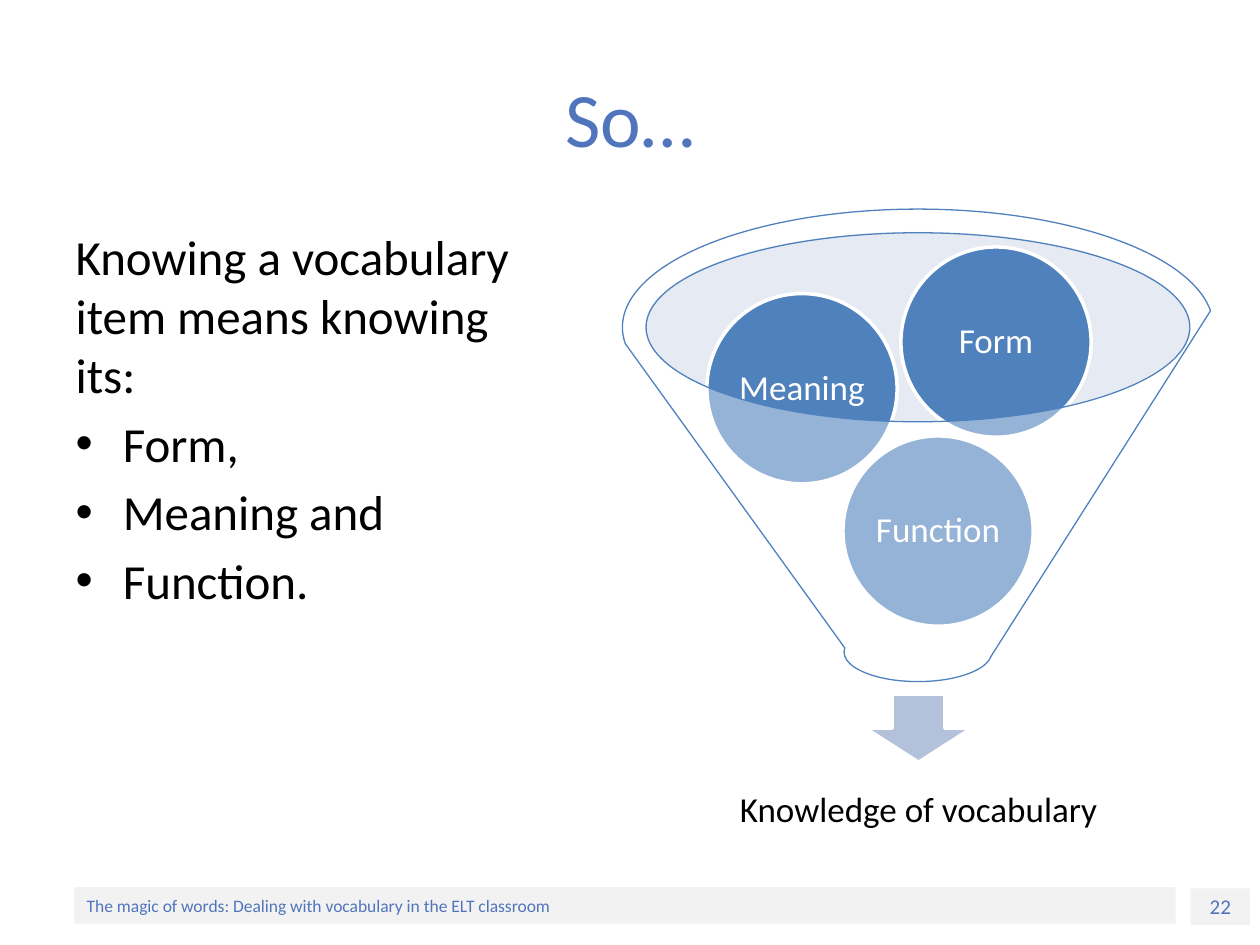
from typing import NamedTuple, Optional

from lxml.etree import SubElement
from pptx import Presentation
from pptx.dml.color import RGBColor
from pptx.enum.shapes import MSO_SHAPE as Shape
from pptx.enum.text import MSO_ANCHOR as Anchor, PP_ALIGN as Align
from pptx.oxml.ns import qn
from pptx.util import Inches, Pt

FONT = "Calibri"
COLORS = {
    "accent": "5075BC",
    "bar": "F2F2F2",
    "ball": "4F81BD",
    "mouth": "C2CDE1",
    "arrow": "B3C1DB",
    "white": "FFFFFF",
    "black": "000000",
}


class Area(NamedTuple):
    left: float
    top: float
    width: float
    height: float

    def lengths(self) -> list:
        return [Inches(value) for value in self]


class Ball(NamedTuple):
    label: str
    left: float
    top: float


class Bar(NamedTuple):
    label: str
    area: Area
    size: int
    align: Align


BALL_SIZE = 1.51
BALLS = [
    Ball("Function", 6.69, 3.46),
    Ball("Meaning", 5.61, 2.33),
    Ball("Form", 7.15, 1.96),
]
BARS = [
    Bar("22", Area(9.45, 7.05, 0.47, 0.29), 12, Align.CENTER),
    Bar("The magic of words: Dealing with vocabulary in the ELT classroom",
        Area(0.59, 7.04, 8.74, 0.29), 10, Align.LEFT),
]
ASPECTS = ["Form,", "Meaning and", "Function."]


def rgb(name: str) -> RGBColor:
    return RGBColor.from_string(COLORS[name])


def style(para, size: int, color: str) -> None:
    para.font.name = FONT
    para.font.size = Pt(size)
    para.font.color.rgb = rgb(color)


def add_figure(page, kind: Shape, area: Area, fill: str,
               line: Optional[str] = None, weight: float = 2,
               opacity: Optional[int] = None):
    figure = page.shapes.add_shape(kind, *area.lengths())
    figure.shadow.inherit = False
    figure.fill.solid()
    figure.fill.fore_color.rgb = rgb(fill)
    if opacity is not None:
        color = figure.fill._xPr.find(qn("a:solidFill"))[0]
        SubElement(color, qn("a:alpha"), val=str(opacity * 1000))
    if line:
        figure.line.color.rgb = rgb(line)
        figure.line.width = Pt(weight)
    else:
        figure.line.fill.background()
    return figure


def write_label(box, text: str, size: int, color: str,
                align: Align = Align.CENTER, inset: Optional[float] = None,
                spacing: Optional[float] = None) -> None:
    frame = box.text_frame
    frame.word_wrap = True
    frame.vertical_anchor = Anchor.MIDDLE
    if inset is not None:
        frame.margin_left = frame.margin_right = Inches(inset)
        frame.margin_top = frame.margin_bottom = Inches(inset)
    para = frame.paragraphs[0]
    para.text = text
    para.alignment = align
    para.line_spacing = spacing
    style(para, size, color)


def place(box, area: Area) -> None:
    box.left, box.top, box.width, box.height = area.lengths()


def add_text(page) -> None:
    title = page.shapes.title
    place(title, Area(0.5, 0.3, 9, 1.25))
    write_label(title, "So…", 44, "accent")

    body = page.placeholders[1]
    place(body, Area(0.5, 1.75, 3.87, 4.95))
    frame = body.text_frame
    lead = frame.paragraphs[0]
    lead.text = "Knowing a vocabulary item means knowing its:"
    lead.space_before = Pt(0)
    props = lead._p.get_or_add_pPr()
    props.set("marL", "0")
    props.set("indent", "0")
    SubElement(props, qn("a:buNone"))
    for aspect in ASPECTS:
        frame.add_paragraph().text = aspect
    for para in frame.paragraphs:
        style(para, 28, "black")


def add_funnel(page) -> None:
    add_figure(page, Shape.OVAL, Area(5.12, 1.84, 4.32, 1.5), "mouth", opacity=40)
    add_figure(page, Shape.DOWN_ARROW, Area(6.87, 5.51, 0.84, 0.54), "arrow", "white")
    result = page.shapes.add_textbox(*Area(5.28, 5.94, 4.02, 1).lengths())
    write_label(result, "Knowledge of vocabulary", 20, "black",
                inset=0.16, spacing=0.9)
    for ball in BALLS:
        area = Area(ball.left, ball.top, BALL_SIZE, BALL_SIZE)
        figure = add_figure(page, Shape.OVAL, area, "ball", "white")
        write_label(figure, ball.label, 20, "white", inset=0.03, spacing=0.9)
    # The translucent funnel lies over the balls
    add_figure(page, Shape.FUNNEL, Area(4.94, 1.66, 4.69, 3.75), "white",
               "ball", 0.75, opacity=40)


def main() -> None:
    deck = Presentation()
    deck.slide_width, deck.slide_height = Inches(10), Inches(7.5)
    page = deck.slides.add_slide(deck.slide_layouts[1])

    # Footer bars
    for bar in BARS:
        figure = add_figure(page, Shape.RECTANGLE, bar.area, "bar")
        write_label(figure, bar.label, bar.size, "accent", bar.align)

    add_text(page)
    add_funnel(page)
    deck.save("out.pptx")


if __name__ == "__main__":
    main()
